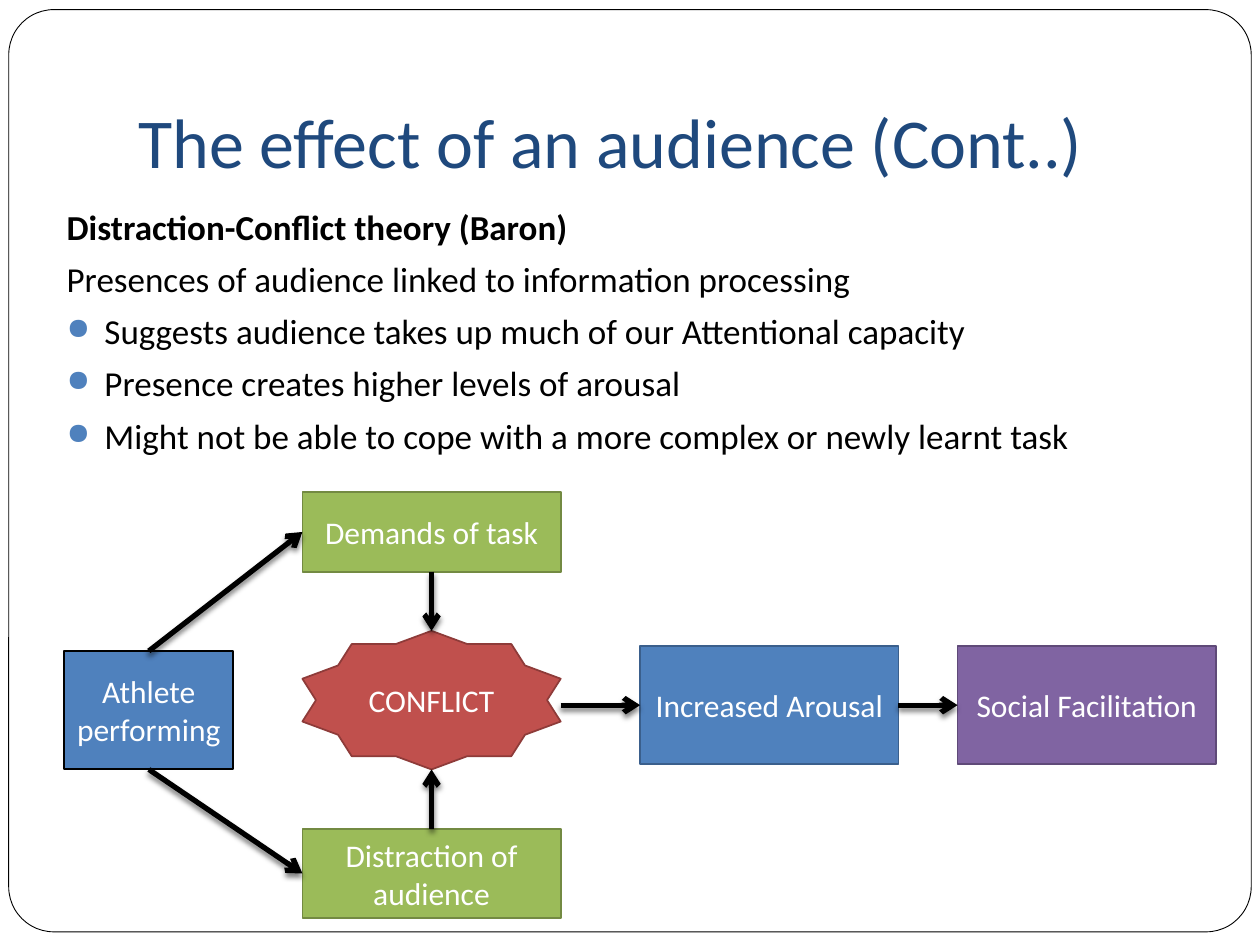
from lxml import etree
from pptx import Presentation
from pptx.dml.color import RGBColor
from pptx.enum import shapes, text
from pptx.oxml import ns
from pptx.util import Pt

HUES = {
    "black": "000000", "white": "FFFFFF", "navy": "1F497D",
    "blue": "4F81BD", "steel": "3A5F8C", "green": "9BBB59", "olive": "738A42",
    "red": "C0504D", "wine": "8E3B39", "violet": "8064A2", "plum": "5F4A78",
}
FONT = "Calibri"
RECT = shapes.MSO_SHAPE.RECTANGLE
STAR = shapes.MSO_SHAPE.STAR_10_POINT
TOP, LEFT, BOTTOM, RIGHT = range(4)


def hue(name):
    return RGBColor.from_string(HUES[name])


def sub(node, tag, **attrs):
    return etree.SubElement(node, ns.qn(tag), attrs)


def style(para, size, name, bold=False):
    font = para.font
    font.name, font.size, font.bold = FONT, Pt(size), bold
    font.color.rgb = hue(name)


def add_shape(slide, kind, box, fill, line, width=1):
    shape = slide.shapes.add_shape(kind, *map(Pt, box))
    shape.shadow.inherit = False
    shape.fill.solid()
    shape.fill.fore_color.rgb = hue(fill)
    shape.line.color.rgb = hue(line)
    shape.line.width = Pt(width)
    return shape


def add_text(slide, box):
    frame = slide.shapes.add_textbox(*map(Pt, box)).text_frame
    frame.word_wrap = True
    return frame


def add_frame(slide, box):
    frame = add_shape(slide, shapes.MSO_SHAPE.ROUNDED_RECTANGLE, box,
                      "white", "black", 0.5)
    frame.adjustments[0] = 0.049


def add_title(slide, box):
    frame = add_text(slide, box)
    frame.vertical_anchor = text.MSO_ANCHOR.BOTTOM
    frame.margin_bottom = Pt(7.2)
    para = frame.paragraphs[0]
    para.text = "The effect of an audience (Cont..)"
    style(para, 40, "navy")


def add_body(slide, box):
    lines = [  # wording, bold, bullet
        ("Distraction-Conflict theory (Baron)", True, False),
        ("Presences of audience linked to information processing", False, False),
        ("Suggests audience takes up much of our Attentional capacity", False, True),
        ("Presence creates higher levels of arousal", False, True),
        ("Might not be able to cope with a more complex or newly learnt task",
         False, True),
    ]
    frame = add_text(slide, box)
    for i, (words, bold, bullet) in enumerate(lines):
        para = frame.add_paragraph() if i else frame.paragraphs[0]
        para.text = words
        para.space_before = Pt(5.8)
        style(para, 20, "black", bold)
        props = para._p.get_or_add_pPr()
        props.set("marL", str(Pt(21.6)))
        props.set("indent", str(Pt(-21.6)))
        if bullet:
            # Bullet marks must come before the default run properties
            run = props.find(ns.qn("a:defRPr"))
            marks = etree.Element("marks")
            sub(sub(marks, "a:buClr"), "a:srgbClr", val=HUES["blue"])
            sub(marks, "a:buSzPct", val="85000")
            sub(marks, "a:buChar", char="●")
            for mark in list(marks):
                run.addprevious(mark)


def add_node(slide, kind, box, words, fill, line):
    node = add_shape(slide, kind, box, fill, line)
    frame = node.text_frame
    frame.word_wrap = True
    frame.margin_left = frame.margin_right = Pt(6)
    frame.vertical_anchor = text.MSO_ANCHOR.MIDDLE
    para = frame.paragraphs[0]
    para.text = words
    para.alignment = text.PP_ALIGN.CENTER
    style(para, 18, "white")
    return node


def side(node, site):
    x = node.left + node.width * {LEFT: 0, RIGHT: 2}.get(site, 1) // 2
    y = node.top + node.height * {TOP: 0, BOTTOM: 2}.get(site, 1) // 2
    return x, y


def add_arrow(slide, start, out, end, into):
    (x1, y1), (x2, y2) = side(start, out), side(end, into)
    if out == RIGHT:  # level arrows run along the middle of their target
        y1 = y2
    arrow = slide.shapes.add_connector(shapes.MSO_CONNECTOR.STRAIGHT,
                                       x1, y1, x2, y2)
    if start.auto_shape_type == RECT:
        arrow.begin_connect(start, out)
    if end.auto_shape_type == RECT:
        arrow.end_connect(end, into)
    arrow.line.color.rgb = hue("black")
    arrow.line.width = Pt(3)
    sub(arrow.line._get_or_add_ln(), "a:tailEnd", type="arrow")
    # Soft shadow straight below
    glow = sub(sub(arrow._element.spPr, "a:effectLst"), "a:outerShdw",
               blurRad=str(Pt(3)), dist=str(Pt(2)), dir="5400000",
               rotWithShape="0")
    sub(sub(glow, "a:srgbClr", val=HUES["black"]), "a:alpha", val="50000")


def add_flow(slide, box):
    left, top, width, height = box
    wide, tall = 147.6, 67.7
    col = left + 136
    last = left + width - wide
    row = top + 87.8

    # Boxes and star
    athlete = add_node(slide, RECT, (left, top + 90.7, 96.5, tall),
                       "Athlete performing", "blue", "black")
    task = add_node(slide, RECT, (col, top, wide, 45.4),
                    "Demands of task", "green", "olive")
    crowd = add_node(slide, RECT, (col, top + height - 51.1, wide, 51.1),
                     "Distraction of audience", "green", "olive")
    clash = add_node(slide, STAR, (col, top + 79.2, wide, 79.2),
                     "CONFLICT", "red", "wine")
    arousal = add_node(slide, RECT, (left + 329, row, wide, tall),
                       "Increased Arousal", "blue", "steel")
    social = add_node(slide, RECT, (last, row, wide, tall),
                      "Social Facilitation", "violet", "plum")

    # Arrows
    for link in [
        (athlete, TOP, task, LEFT),
        (task, BOTTOM, clash, TOP),
        (crowd, TOP, clash, BOTTOM),
        (athlete, BOTTOM, crowd, LEFT),
        (clash, RIGHT, arousal, LEFT),
        (arousal, RIGHT, social, LEFT),
    ]:
        add_arrow(slide, *link)


def main():
    deck = Presentation()
    deck.slide_width, deck.slide_height = Pt(720), Pt(540)
    slide = deck.slides.add_slide(deck.slide_layouts[6])
    add_frame(slide, (5, 5.5, 710, 527))
    add_title(slide, (72, 21.6, 612, 90))
    add_body(slide, (31, 113.8, 663, 405.4))
    add_flow(slide, (36.8, 281.3, 658, 243.4))
    deck.save("out.pptx")


if __name__ == "__main__":
    main()
